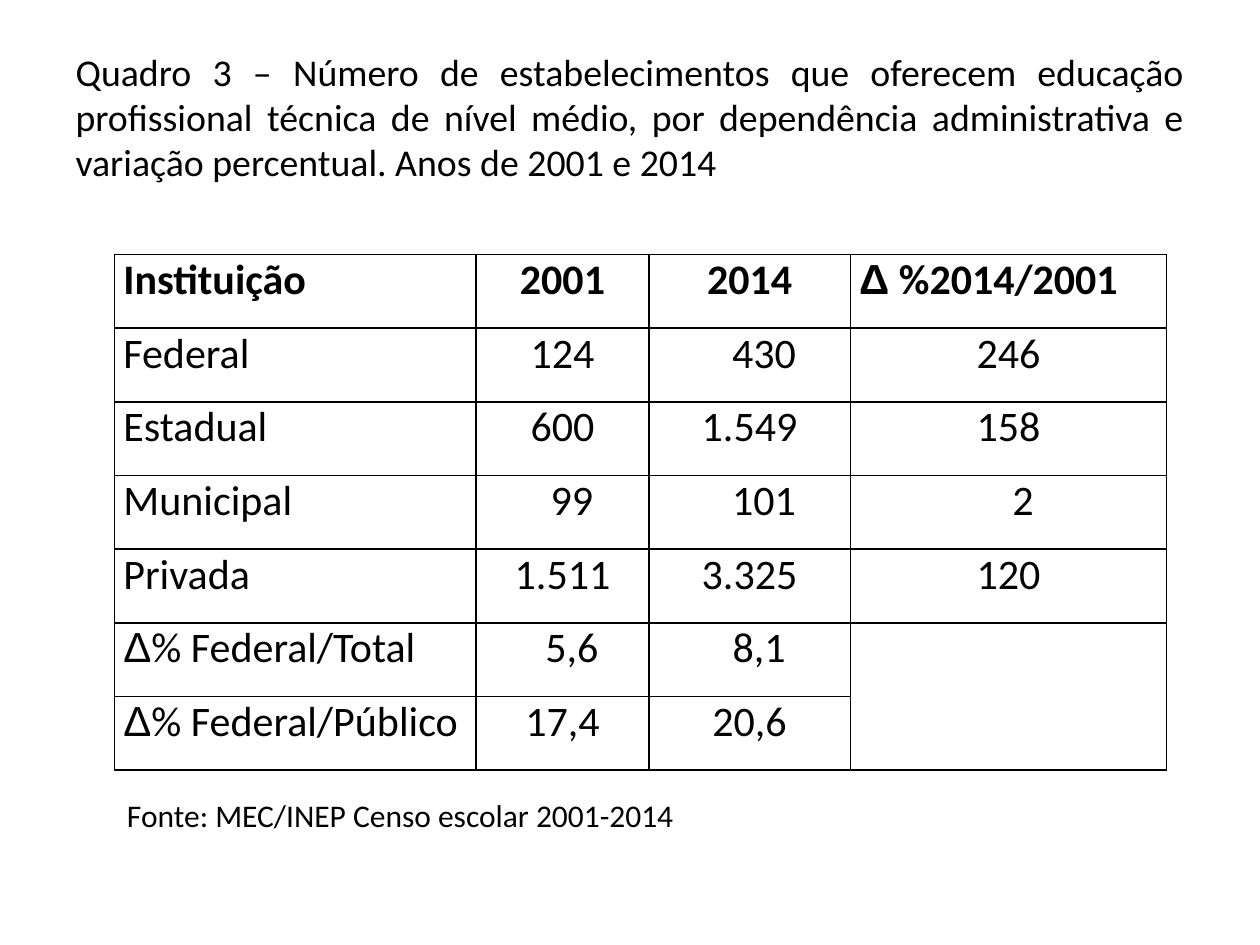
import pptx
import pptx.dml.color
import pptx.enum.text
import pptx.oxml
import pptx.oxml.ns
import pptx.util
from pptx.util import Inches

BLACK = pptx.dml.color.RGBColor(0, 0, 0)
ALIGN = pptx.enum.text.PP_ALIGN
FONT = "Calibri"
TITLE = (
    "Quadro 3 – Número de estabelecimentos que oferecem educação "
    "profissional técnica de nível médio, por dependência administrativa "
    "e variação percentual. Anos de 2001 e 2014"
)
SOURCE = "Fonte: MEC/INEP Censo escolar 2001-2014"
ROWS = [
    ["Instituição", "2001", "2014", "Δ %2014/2001"],
    ["Federal", "124", "430", "246"],
    ["Estadual", "600", "1.549", "158"],
    ["Municipal", "99", "101", "2"],
    ["Privada", "1.511", "3.325", "120"],
    ["Δ% Federal/Total", "5,6", "8,1", ""],
    ["Δ% Federal/Público", "17,4", "20,6", ""],
]
COLUMN_WIDTHS = [2.87, 1.37, 1.6, 2.51]
ROW_HEIGHT = 0.585
CELL_MARGIN = 0.07
# Extra left margin, by (row, column), that lines up the shorter numbers.
NUMBER_INDENTS = {
    (1, 2): 0.23, (3, 1): 0.15, (3, 2): 0.23,
    (3, 3): 0.23, (5, 1): 0.15, (5, 2): 0.15,
}


def format_paragraph(paragraph, size, alignment, bold=False):
    paragraph.alignment = alignment
    font = paragraph.font
    font.name = FONT
    font.size = pptx.util.Pt(size)
    font.bold = bold
    font.color.rgb = BLACK


def add_title(slide):
    title = slide.shapes.title
    title.left, title.top = Inches(0.5), Inches(0.3)
    title.width, title.height = Inches(9), Inches(1.25)
    frame = title.text_frame
    frame.text = TITLE
    frame.auto_size = pptx.enum.text.MSO_AUTO_SIZE.NONE
    frame.vertical_anchor = pptx.enum.text.MSO_ANCHOR.MIDDLE
    format_paragraph(frame.paragraphs[0], 21.6, ALIGN.JUSTIFY)


def set_borders(cell):
    properties = cell._tc.get_or_add_tcPr()
    for position, side in enumerate(("lnL", "lnR", "lnT", "lnB")):
        line = pptx.oxml.parse_xml(
            f'<a:{side} {pptx.oxml.ns.nsdecls("a")} w="12700">'
            f'<a:solidFill><a:srgbClr val="{BLACK}"/></a:solidFill></a:{side}>'
        )
        properties.insert(position, line)


def fill_cell(cell, text, alignment, bold, indent):
    cell.margin_left = Inches(CELL_MARGIN + indent)
    cell.margin_right = Inches(CELL_MARGIN)
    cell.margin_top = cell.margin_bottom = 0
    cell.fill.background()
    set_borders(cell)
    paragraph = cell.text_frame.paragraphs[0]
    format_paragraph(paragraph, 24, alignment, bold)
    if text.startswith("Δ"):
        symbol = paragraph.add_run()
        symbol.text = "Δ"
        symbol.font.name = "Arial"
        text = text[1:]
    if text:
        paragraph.add_run().text = text


def add_table(slide):
    table = slide.shapes.add_table(
        len(ROWS), len(COLUMN_WIDTHS), Inches(0.91), Inches(2.02),
        Inches(sum(COLUMN_WIDTHS)), Inches(ROW_HEIGHT * len(ROWS)),
    ).table
    table.first_row = table.horz_banding = False
    for column, width in zip(table.columns, COLUMN_WIDTHS):
        column.width = Inches(width)
    for row_index, values in enumerate(ROWS):
        table.rows[row_index].height = Inches(ROW_HEIGHT)
        for column_index, text in enumerate(values):
            is_label = column_index == 0 or text.startswith("Δ")
            fill_cell(
                table.cell(row_index, column_index), text,
                ALIGN.JUSTIFY if is_label else ALIGN.CENTER,
                bold=row_index == 0,
                indent=NUMBER_INDENTS.get((row_index, column_index), 0),
            )
    table.cell(5, 3).merge(table.cell(6, 3))


def add_source(slide):
    box = slide.shapes.add_textbox(
        Inches(0.91), Inches(6.27), Inches(6.93), Inches(0.4)
    )
    frame = box.text_frame
    frame.word_wrap = True
    frame.auto_size = pptx.enum.text.MSO_AUTO_SIZE.SHAPE_TO_FIT_TEXT
    frame.text = SOURCE
    format_paragraph(frame.paragraphs[0], 18, ALIGN.LEFT)


def main():
    presentation = pptx.Presentation()
    presentation.slide_width = Inches(10)
    presentation.slide_height = Inches(7.5)
    title_only = presentation.slide_layouts[5]
    slide = presentation.slides.add_slide(title_only)
    add_title(slide)
    add_table(slide)
    add_source(slide)
    presentation.save("out.pptx")


if __name__ == "__main__":
    main()
